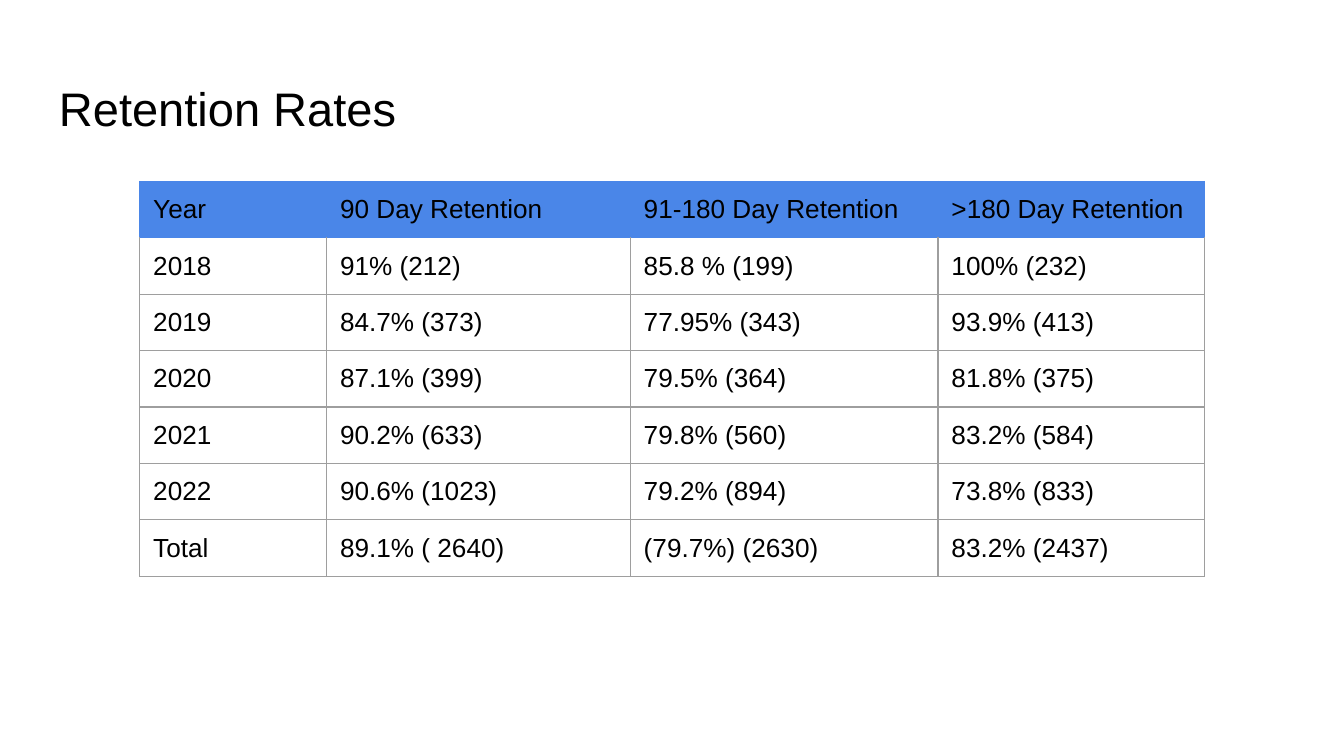
from lxml.etree import SubElement
from pptx import Presentation
from pptx.dml.color import RGBColor
from pptx.enum.text import MSO_ANCHOR
from pptx.oxml.ns import qn
from pptx.util import Inches, Pt

BLACK = RGBColor(0x00, 0x00, 0x00)
BLUE = RGBColor(0x4A, 0x86, 0xE8)
GRAY = RGBColor(0x9E, 0x9E, 0x9E)
FONT = "Arial"
SLIDE_WIDTH = 10
ROW_HEIGHT = 0.42
COLUMN_WIDTHS = [1.39, 2.26, 2.29, 1.98]
RETENTION = [
    ["Year", "90 Day Retention", "91-180 Day Retention", ">180 Day Retention"],
    ["2018", "91% (212)", "85.8 % (199)", "100% (232)"],
    ["2019", "84.7% (373)", "77.95% (343)", "93.9% (413)"],
    ["2020", "87.1% (399)", "79.5% (364)", "81.8% (375)"],
    ["2021", "90.2% (633)", "79.8% (560)", "83.2% (584)"],
    ["2022", "90.6% (1023)", "79.2% (894)", "73.8% (833)"],
    ["Total", "89.1% ( 2640)", "(79.7%) (2630)", "83.2% (2437)"],
]


def set_margins(holder, bottom):
    """Set the insets of a text frame or a table cell."""
    holder.margin_left = holder.margin_right = holder.margin_top = Inches(0.1)
    holder.margin_bottom = Inches(bottom)


def write_text(frame, text, size):
    """Put one styled paragraph in a text frame."""
    paragraph = frame.paragraphs[0]
    paragraph.text = text
    paragraph.font.name = FONT
    paragraph.font.size = Pt(size)
    paragraph.font.color.rgb = BLACK


def add_title(slide, text):
    """Add the slide heading."""
    heading = slide.shapes.add_textbox(
        Inches(0.34), Inches(0.49), Inches(9.32), Inches(0.63)
    ).text_frame
    heading.word_wrap = True
    heading.vertical_anchor = MSO_ANCHOR.TOP
    set_margins(heading, 0.1)
    write_text(heading, text, 25.2)


def set_borders(cell, color, top_color):
    """Draw the four cell borders, with a separate colour on top."""
    properties = cell._tc.get_or_add_tcPr()
    for side in "LRTB":
        line = SubElement(properties, qn(f"a:ln{side}"), w=str(Pt(0.75)))
        solid = SubElement(line, qn("a:solidFill"))
        side_color = top_color if side == "T" else color
        SubElement(solid, qn("a:srgbClr"), val=str(side_color))


def fill_cell(cell, text, row):
    """Write and style one cell according to its row."""
    write_text(cell.text_frame, text, 14)
    set_margins(cell, 0.08)
    set_borders(cell, BLUE if row == 0 else GRAY, BLUE if row <= 1 else GRAY)
    if row == 0:
        cell.fill.solid()
        cell.fill.fore_color.rgb = BLUE
    else:
        cell.fill.background()


def add_retention_table(slide):
    """Add the table of retention rates by year."""
    table = slide.shapes.add_table(
        len(RETENTION), len(COLUMN_WIDTHS), Inches(1.04), Inches(1.35),
        Inches(sum(COLUMN_WIDTHS)), Inches(ROW_HEIGHT * len(RETENTION)),
    ).table
    table.first_row = table.horz_banding = False
    for column, width in zip(table.columns, COLUMN_WIDTHS):
        column.width = Inches(width)
    for row, values in enumerate(RETENTION):
        table.rows[row].height = Inches(ROW_HEIGHT)
        for column, value in enumerate(values):
            fill_cell(table.cell(row, column), value, row)


def main():
    """Build and save the retention slide."""
    deck = Presentation()
    deck.slide_width = Inches(SLIDE_WIDTH)
    deck.slide_height = Inches(SLIDE_WIDTH * 9 / 16)
    slide = deck.slides.add_slide(deck.slide_layouts[6])
    add_title(slide, "Retention Rates")
    add_retention_table(slide)
    deck.save("out.pptx")


if __name__ == "__main__":
    main()
